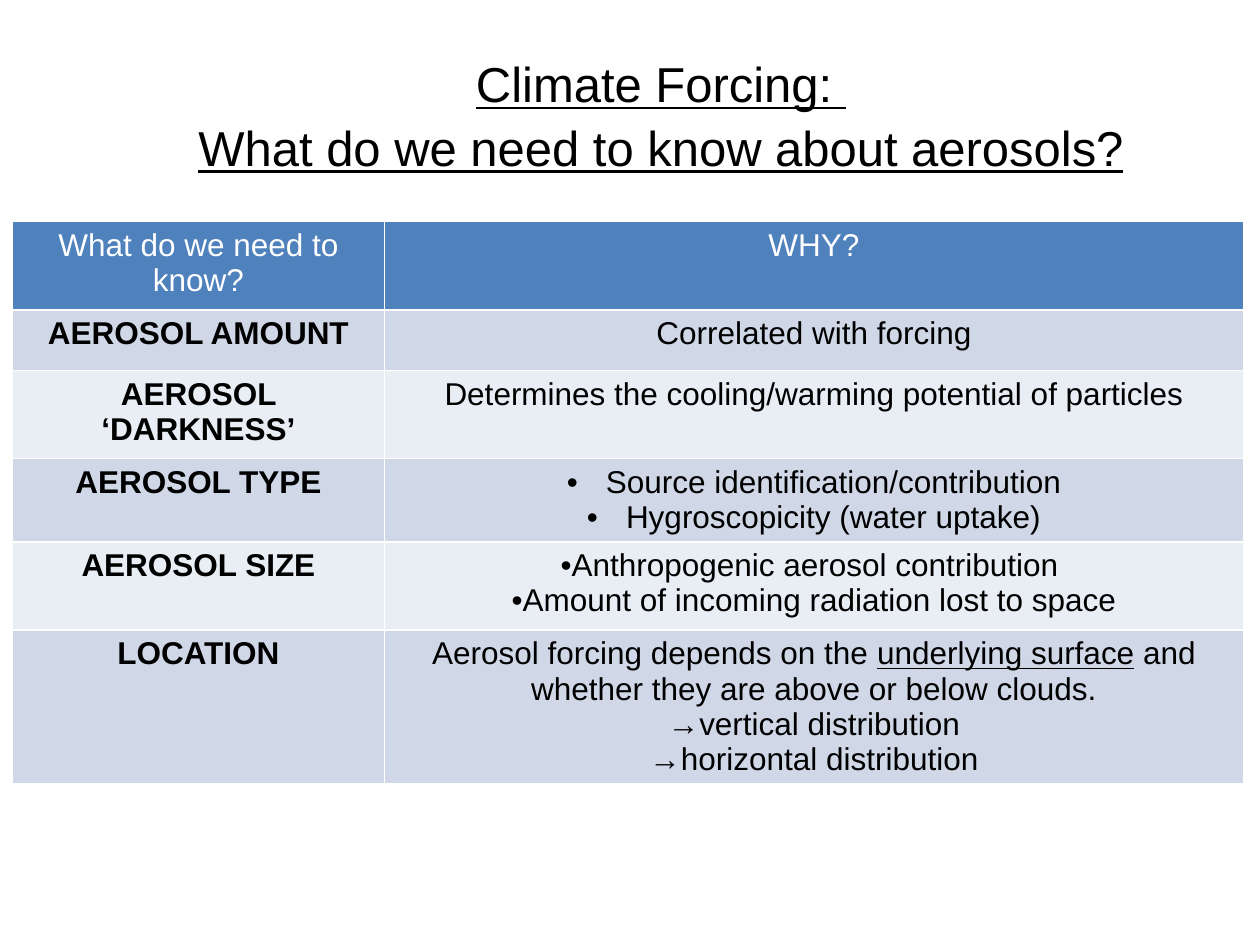
from lxml.etree import SubElement
from pptx import Presentation
from pptx.dml.color import RGBColor
from pptx.enum.text import PP_ALIGN as Align
from pptx.oxml.ns import qn
from pptx.util import Inches, Pt

COLORS = {"header": "4F81BD", "band_dark": "D0D8E8", "band_light": "E9EDF4",
          "border": "FFFFFF", "header_text": "FFFFFF", "text": "000000"}

TITLE = ["Climate Forcing: ", "What do we need to know about aerosols?"]

# Row height, topic, reasons, bullet indent (None for no bullets);
# underscores enclose underlined words
ROWS = [
    (0.7, "What do we need to know?", ["WHY?"], None),
    (0.48, "AEROSOL AMOUNT", ["Correlated with forcing"], None),
    (0.7, "AEROSOL ‘DARKNESS’",
     ["Determines the cooling/warming potential of particles"], None),
    (0.66, "AEROSOL TYPE",
     ["Source identification/contribution", "Hygroscopicity (water uptake)"], 0.31),
    (0.7, "AEROSOL SIZE",
     ["Anthropogenic aerosol contribution ",
      "Amount of incoming radiation lost to space"], 0),
    (1.21, "LOCATION",
     ["Aerosol forcing depends on the _underlying surface_ and whether they "
      "are above or below clouds.",
      "→vertical distribution", "→horizontal distribution"], None),
]


class SlideBuilder:
    font = "Arial"
    title_size = 28
    table_size = 18

    def __init__(self, slide):
        self.slide = slide

    def fill_text(self, text_frame, lines, size, color, bold=False, underline=False):
        """Fill a text frame with centred paragraphs."""
        text_frame.text = "\n".join(lines)
        for paragraph, line in zip(text_frame.paragraphs, lines):
            paragraph.alignment = Align.CENTER
            paragraph.text = ""
            for index, part in enumerate(line.split("_")):
                run = paragraph.add_run()
                run.text = part
                run.font.name = self.font
                run.font.size = Pt(size)
                run.font.bold = bold
                run.font.underline = underline or index % 2 == 1
                run.font.color.rgb = RGBColor.from_string(COLORS[color])

    def bullet(self, paragraph, indent):
        properties = paragraph._p.get_or_add_pPr()
        properties.set("marL", str(Inches(indent)))
        properties.set("indent", str(-Inches(indent)))
        SubElement(properties, qn("a:buFont"), typeface=self.font)
        SubElement(properties, qn("a:buChar"), char="•")

    def border(self, cell):
        properties = cell._tc.get_or_add_tcPr()
        for side in ("lnL", "lnR", "lnT", "lnB"):
            line = SubElement(properties, qn(f"a:{side}"), w=str(Pt(1)))
            fill = SubElement(line, qn("a:solidFill"))
            SubElement(fill, qn("a:srgbClr"), val=COLORS["border"])

    def title(self, lines, left, top, width, height):
        box = self.slide.shapes.add_textbox(
            Inches(left), Inches(top), Inches(width), Inches(height))
        box.text_frame.word_wrap = True
        self.fill_text(box.text_frame, lines, self.title_size, "text", underline=True)
        for paragraph in box.text_frame.paragraphs:
            paragraph.line_spacing = 1.08

    def table(self, rows, left, top, widths):
        heights = [row[0] for row in rows]
        table = self.slide.shapes.add_table(
            len(rows), len(widths), Inches(left), Inches(top),
            Inches(sum(widths)), Inches(sum(heights))).table
        for column, width in zip(table.columns, widths):
            column.width = Inches(width)

        for row_index, (height, topic, reasons, indent) in enumerate(rows):
            table.rows[row_index].height = Inches(height)
            is_header = row_index == 0
            band = "band_dark" if row_index % 2 else "band_light"
            for column_index, lines in enumerate(([topic], reasons)):
                cell = table.cell(row_index, column_index)
                self.border(cell)
                cell.fill.solid()
                cell.fill.fore_color.rgb = RGBColor.from_string(
                    COLORS["header" if is_header else band])
                self.fill_text(cell.text_frame, lines, self.table_size,
                               "header_text" if is_header else "text",
                               bold=column_index == 0 and not is_header)
            # Bullets belong to the reasons column, the last cell of the row
            if indent is not None:
                for paragraph in cell.text_frame.paragraphs:
                    self.bullet(paragraph, indent)


def main():
    presentation = Presentation()
    presentation.slide_width = Inches(10)
    presentation.slide_height = Inches(7.5)
    builder = SlideBuilder(
        presentation.slides.add_slide(presentation.slide_layouts[6]))

    # Table of topics and reasons, then the heading
    builder.table(ROWS, 0.1, 1.76, [2.95, 6.82])
    builder.title(TITLE, 0.49, 0.34, 9.51, 0.67)

    presentation.save("out.pptx")


if __name__ == "__main__":
    main()
